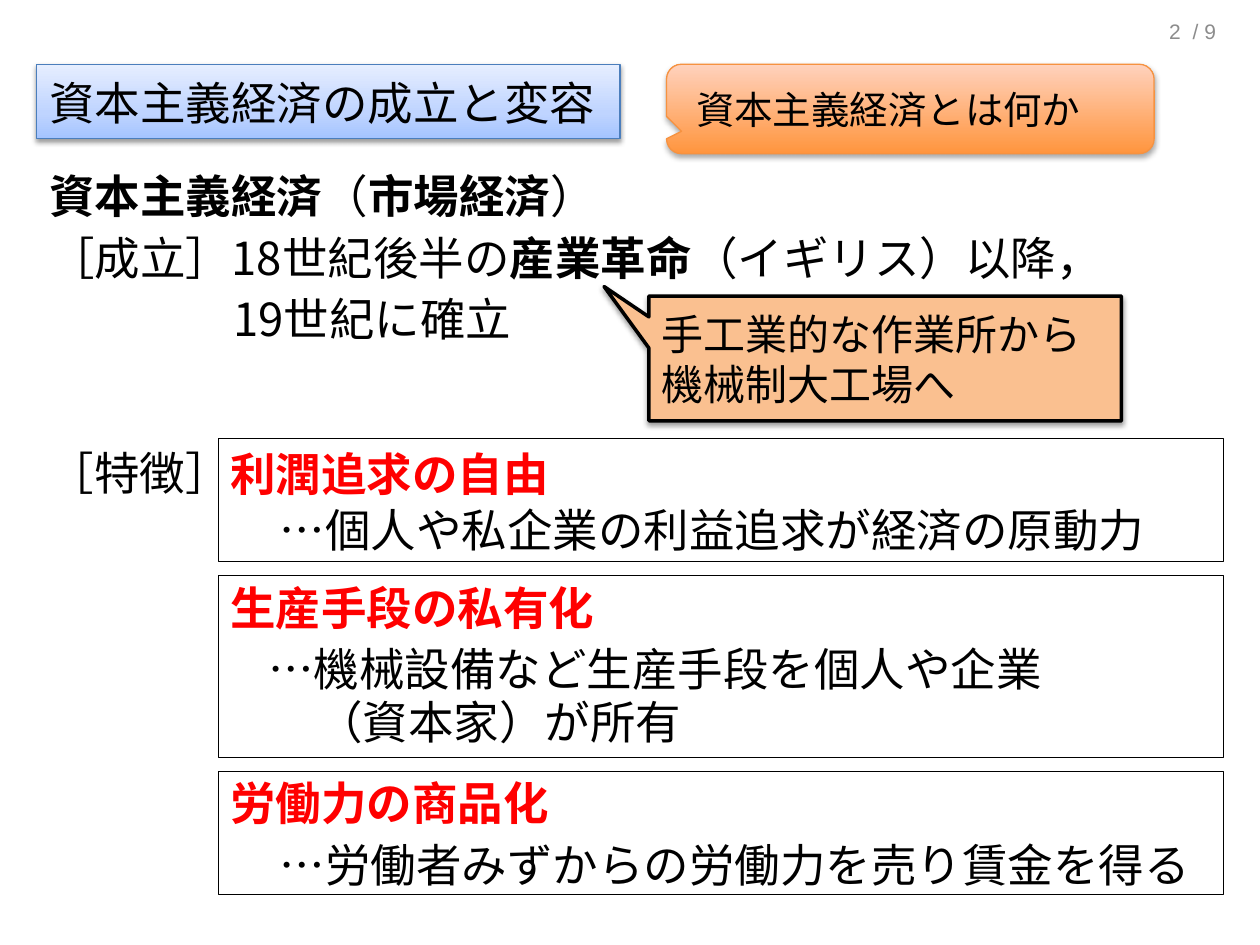
import copy

import pptx
import pptx.dml.color
import pptx.enum.shapes
import pptx.enum.text
import pptx.oxml.ns
import pptx.util
from lxml import etree

Inches = pptx.util.Inches
Pt = pptx.util.Pt
RGB = pptx.dml.color.RGBColor
Kind = pptx.enum.shapes.MSO_SHAPE
Align = pptx.enum.text.PP_ALIGN
Anchor = pptx.enum.text.MSO_ANCHOR
qn = pptx.oxml.ns.qn

BLACK = RGB(0x00, 0x00, 0x00)
RED = RGB(0xFF, 0x00, 0x00)
GRAY = RGB(0x8C, 0x8C, 0x8C)
PEACH = RGB(0xFA, 0xC0, 0x90)
ORANGE = RGB(0xF6, 0x92, 0x40)
BLUE = RGB(0x4B, 0x7E, 0xBC)
BLUES = [(0, RGB(0xA4, 0xC4, 0xFF)), (0.35, RGB(0xBF, 0xD4, 0xFF)),
         (1, RGB(0xE6, 0xEE, 0xFF))]
WARM = [(0, RGB(0xFF, 0x95, 0x3E)), (1, RGB(0xFF, 0xD2, 0xBD))]


class Page:
    """Holds the text style and the current slide."""
    face = "Noto Sans CJK JP"
    size = 26
    gap = 5.2  # space between paragraphs, points

    def __init__(self, deck):
        self.slide = deck.slides.add_slide(deck.slide_layouts[1])

    def place(self, shape, box):
        shape.left, shape.top, shape.width, shape.height = map(Inches, box)
        return shape

    def label(self, shape, lines, size=size, face=face, color=BLACK, pitch=None,
              gap=0, anchor=Anchor.TOP, align=Align.LEFT, inset=0.1):
        """Lines are (text, margin, indent); *stars* mark bold text."""
        frame = shape.text_frame
        frame.word_wrap = True
        frame.auto_size = pptx.enum.text.MSO_AUTO_SIZE.NONE
        frame.vertical_anchor = anchor
        frame.margin_left = Inches(inset)
        for i, (text, margin, indent) in enumerate(lines):
            para = frame.add_paragraph() if i else frame.paragraphs[0]
            props = para._p.get_or_add_pPr()
            props.set("marL", str(Inches(margin)))
            props.set("indent", str(Inches(indent)))
            etree.SubElement(props, qn("a:buNone"))
            para.alignment = align
            para.space_before = Pt(gap if i else 0)
            if pitch:
                para.line_spacing = Pt(pitch)
            for j, part in enumerate(text.split("*")):
                for k, piece in enumerate(part.split("\n")):
                    if k:
                        para.add_line_break()
                    if piece:
                        self.style(para.add_run(), piece, size, face, color, j % 2 == 1)
        return shape

    def style(self, run, text, size, face, color, bold):
        run.text = text
        run.font.size, run.font.bold, run.font.name = Pt(size), bold, face
        run.font.color.rgb = color
        etree.SubElement(run._r.get_or_add_rPr(), qn("a:ea"), typeface=face)

    def text(self, box, line, **look):
        shape = self.slide.shapes.add_textbox(*map(Inches, box))
        return self.label(shape, [line], **look)

    def shape(self, kind, box, adjust=()):
        shape = self.slide.shapes.add_shape(kind, *map(Inches, box))
        shape.shadow.inherit = False
        for i, value in enumerate(adjust):
            shape.adjustments[i] = value
        return shape

    def edge(self, shape, color, width):
        shape.line.color.rgb = color
        shape.line.width = Pt(width)

    def blend(self, shape, stops):
        """Fill from bottom to top."""
        shape.fill.gradient()
        shape.fill.gradient_angle = 90
        group = shape._element.spPr.find(qn("a:gradFill")).find(qn("a:gsLst"))
        while len(group) < len(stops):
            group.append(copy.deepcopy(group[-1]))
        for stop, (spot, color) in zip(shape.fill.gradient_stops, stops):
            stop.position = spot
            stop.color.rgb = color

    def shade(self, shape, alpha, drop):
        shape.shadow.inherit = False
        group = shape._element.spPr.find(qn("a:effectLst"))
        cast = etree.SubElement(group, qn("a:outerShdw"), blurRad=str(Pt(3.1)),
                                dist=str(Pt(drop)), dir="5400000", rotWithShape="0")
        tint = etree.SubElement(cast, qn("a:srgbClr"), val="000000")
        etree.SubElement(tint, qn("a:alpha"), val=str(alpha * 1000))


def main():
    deck = pptx.Presentation()
    deck.slide_width, deck.slide_height = Inches(10), Inches(7.5)
    page = Page(deck)
    title, body = page.slide.placeholders

    # Page number
    for left, mark in ((7.14, "2"), (7.42, "/ 9")):
        page.text((left, 0.12, 2.33, 0.26), (mark, 0, 0), size=12, face="Arial",
                  color=GRAY, anchor=Anchor.MIDDLE, align=Align.RIGHT)

    # Origins
    page.place(body, (0.29, 1.3, 9.45, 0.59))
    page.label(body, [
        ("*資本主義経済*（*市場経済*）", 1.37, -1.37),
        ("［成立］18世紀後半の*産業革命*（イギリス）以降，", 1.37, -1.37),
        ("19世紀に確立", 1.37, 0.09),
    ], pitch=30, gap=page.gap)

    # Title
    page.place(title, (0.29, 0.51, 4.63, 0.59))
    page.blend(title, BLUES)
    page.edge(title, BLUE, 0.75)
    page.shade(title, 38, 1.6)
    page.label(title, [("資本主義経済の成立と変容", 0, 0)], pitch=32, anchor=Anchor.MIDDLE)

    # Topic callout
    topic = page.shape(Kind.ROUNDED_RECTANGULAR_CALLOUT, (5.29, 0.51, 3.87, 0.71),
                       (-0.469, 0.25, 0.167))
    page.blend(topic, WARM)
    page.edge(topic, ORANGE, 0.75)
    page.shade(topic, 35, 1.8)
    page.label(topic, [("資本主義経済とは何か", 0, 0)], size=22, pitch=27,
               anchor=Anchor.MIDDLE, inset=0.2)

    # Features
    page.text((0.29, 3.5, 1.71, 0.47), ("［特徴］", 1.67, -1.67), pitch=30)
    top = 3.48
    tight = dict(pitch=32, anchor=Anchor.MIDDLE)
    loose = dict(pitch=30, gap=page.gap)
    for kind, height, head, note, look in (
        (Kind.FLOWCHART_PROCESS, 0.98, "利潤追求の自由",
         ("…個人や私企業の利益追求が経済の原動力", 0.39, 0), tight),
        (Kind.RECTANGLE, 1.44, "生産手段の私有化",
         ("…機械設備など生産手段を個人や企業\n（資本家）が所有", 0.69, -0.39), loose),
        (Kind.RECTANGLE, 0.98, "労働力の商品化",
         ("…労働者みずからの労働力を売り賃金を得る", 0.39, 0), loose),
    ):
        panel = page.shape(kind, (1.73, top, 7.98, height))
        panel.fill.background()
        page.edge(panel, BLACK, 0.5)
        page.label(panel, [(f"*{head}*", 0, 0), note], **look)
        for run in panel.text_frame.paragraphs[0].runs:
            run.font.color.rgb = RED
        top += height + 0.11

    # Revolution callout
    shift = page.shape(Kind.RECTANGULAR_CALLOUT, (5.15, 2.35, 3.75, 0.99), (-0.595, -0.577))
    shift.fill.solid()
    shift.fill.fore_color.rgb = PEACH
    page.edge(shift, BLACK, 2)
    page.shade(shift, 38, 1.6)
    page.label(shift, [("手工業的な作業所から機械制大工場へ", 0, 0)], size=24, pitch=29,
               anchor=Anchor.MIDDLE)

    deck.save("out.pptx")


if __name__ == "__main__":
    main()
